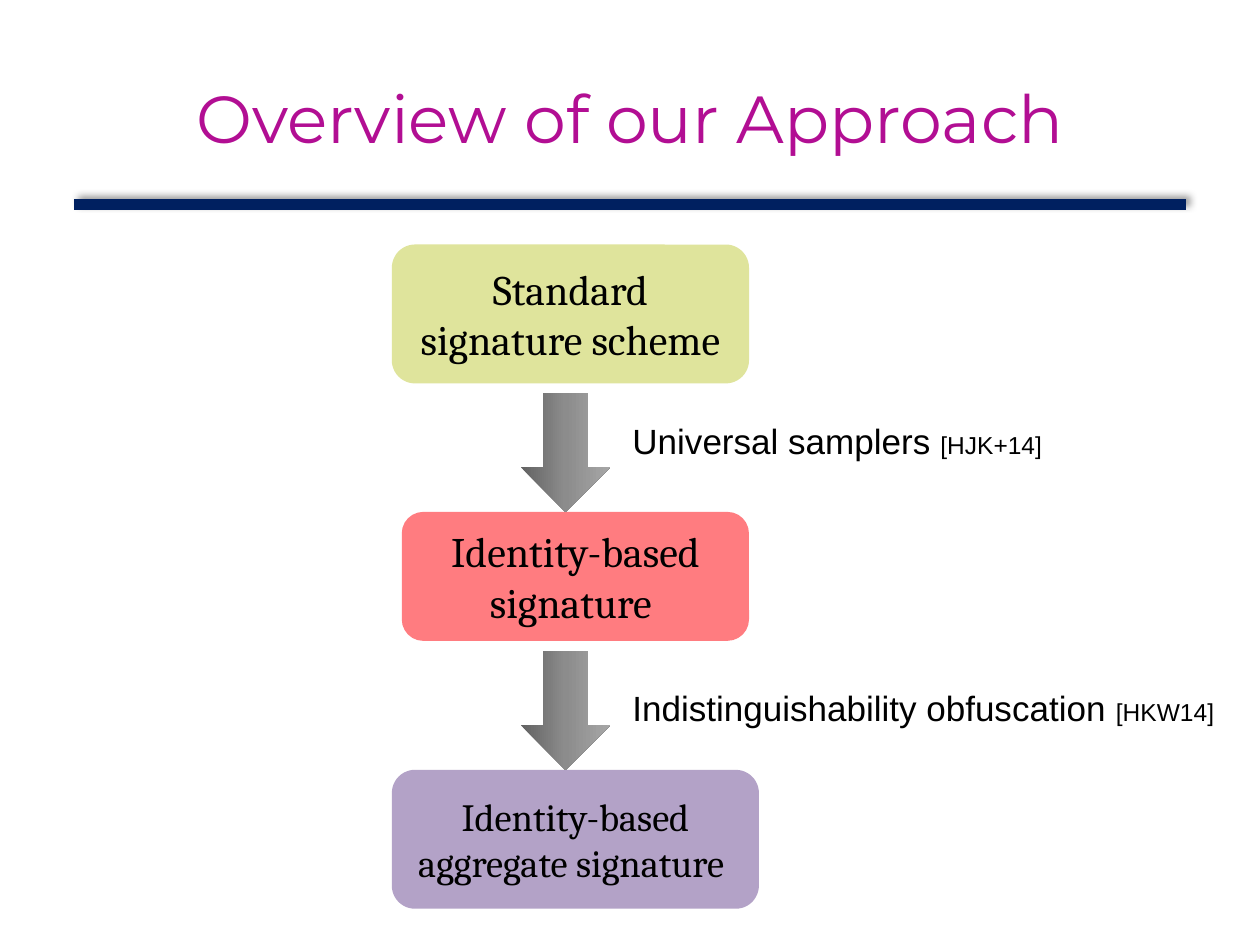
from copy import deepcopy
from dataclasses import dataclass

from lxml import etree
from pptx import Presentation
from pptx.dml.color import RGBColor
from pptx.enum import shapes, text
from pptx.oxml.ns import qn
from pptx.util import Cm, Pt


@dataclass(frozen=True)
class Theme:
    title: str = "B20E93"
    rule: str = "002060"
    ink: str = "000000"
    green: str = "DFE49C"
    red: str = "FF7C80"
    violet: str = "B3A2C7"
    greys: tuple = ("626262", "8C8C8C", "A6A6A6")
    head: int = 38
    large: int = 24
    mid: int = 22
    body: int = 20
    small: int = 14


class Deck:
    def __init__(self, theme):
        self.theme = theme
        self.prs = Presentation()
        self.prs.slide_width, self.prs.slide_height = Cm(25.4), Cm(19.05)
        self.slide = self.prs.slides.add_slide(self.prs.slide_layouts[6])

    def style(self, run, font, size, color):
        run.font.name, run.font.size = font, Pt(size)
        run.font.color.rgb = RGBColor.from_string(color)

    def center(self, frame, words, font, size, color):
        frame.text = words
        frame.word_wrap = True
        frame.vertical_anchor = text.MSO_ANCHOR.MIDDLE
        par = frame.paragraphs[0]
        par.alignment = text.PP_ALIGN.CENTER
        self.style(par.runs[0], font, size, color)

    def title(self, words, *area):
        box = self.slide.shapes.add_textbox(*map(Cm, area))
        self.center(box.text_frame, words, "Montserrat", self.theme.head, self.theme.title)

    def rule(self, left, right, y):
        line = self.slide.shapes.add_connector(
            shapes.MSO_CONNECTOR.STRAIGHT, Cm(left), Cm(y), Cm(right), Cm(y))
        line.line.width = Pt(6)
        line.line.color.rgb = RGBColor.from_string(self.theme.rule)
        # Soft shadow, up and to the right
        effects = etree.SubElement(line._element.spPr, qn("a:effectLst"))
        shadow = etree.SubElement(
            effects, qn("a:outerShdw"), blurRad=str(Pt(4)), dist=str(Pt(3)),
            dir=str(315 * 60000), algn="bl", rotWithShape="0")
        color = etree.SubElement(shadow, qn("a:srgbClr"), val=self.theme.ink)
        etree.SubElement(color, qn("a:alpha"), val="40000")

    def shape(self, kind, *area):
        item = self.slide.shapes.add_shape(kind, *map(Cm, area))
        item.shadow.inherit = False
        item.line.fill.background()
        return item

    def step(self, words, fill, size, *area):
        box = self.shape(shapes.MSO_SHAPE.ROUNDED_RECTANGLE, *area)
        box.fill.solid()
        box.fill.fore_color.rgb = RGBColor.from_string(fill)
        self.center(box.text_frame, words, "Cambria", size, self.theme.ink)

    def arrow(self, *area):
        item = self.shape(shapes.MSO_SHAPE.DOWN_ARROW, *area)
        item.fill.gradient()
        item.fill.gradient_angle = 0
        # A third stop in the middle of the gradient
        stops = item._element.spPr.find(".//" + qn("a:gsLst"))
        stops.insert(1, deepcopy(stops[0]))
        for i, (stop, grey) in enumerate(zip(item.fill.gradient_stops, self.theme.greys)):
            stop.position = i / 2
            stop.color.rgb = RGBColor.from_string(grey)

    def label(self, words, cite, *area):
        frame = self.slide.shapes.add_textbox(*map(Cm, area)).text_frame
        frame.word_wrap = False
        frame.auto_size = text.MSO_AUTO_SIZE.SHAPE_TO_FIT_TEXT
        par = frame.paragraphs[0]
        for part, size in ((words, self.theme.body), (cite, self.theme.small)):
            run = par.add_run()
            run.text = part
            self.style(run, "Arial", size, self.theme.ink)


def main():
    look = Theme()
    deck = Deck(look)

    # Heading
    deck.rule(1.5, 23.9, 4.12)
    deck.title("Overview of our Approach", 1.27, 0.76, 22.86, 3.18)

    # Schemes, from top to bottom
    steps = (
        ("Standard signature scheme", look.green, look.large, 7.9, 4.93, 7.2, 2.8),
        ("Identity-based signature ", look.red, look.large, 8.1, 10.32, 7, 2.6),
        ("Identity-based aggregate signature ", look.violet, look.mid, 7.9, 15.52, 7.4, 2.8),
    )
    for step in steps:
        deck.step(*step)

    # Each arrow ends on the top of the next scheme
    drop = 2.4
    for step in steps[1:]:
        deck.arrow(10.5, step[4] - drop, 1.8, drop)

    # Tools used at each arrow
    deck.label("Universal samplers ", "[HJK+14]", 12.5, 8.33, 8.84, 1.12)
    deck.label("Indistinguishability obfuscation ", "[HKW14]", 12.5, 13.72, 12.32, 1.12)

    deck.prs.save("out.pptx")


if __name__ == "__main__":
    main()
